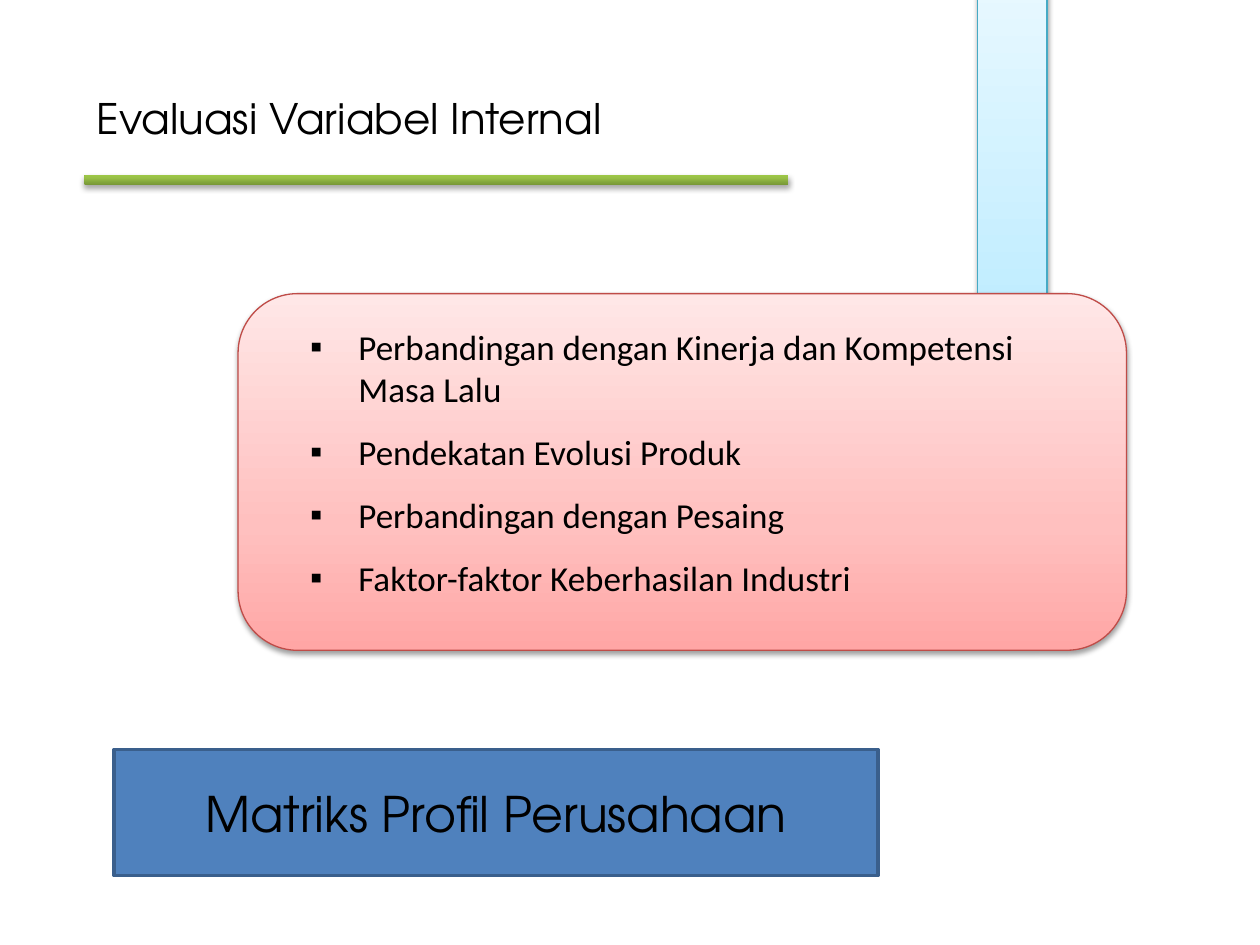
"""Build the slide on evaluating internal variables."""
from lxml.etree import SubElement
from pptx import Presentation
from pptx.dml.color import RGBColor
from pptx.enum.shapes import MSO_SHAPE
from pptx.enum.text import MSO_ANCHOR, MSO_AUTO_SIZE, PP_ALIGN
from pptx.oxml.ns import qn
from pptx.util import Cm, Pt

COLORS = {
    "text": "000000",
    "bar": ["A7E6FF", "C1EDFF", "E7F8FF"],
    "bar_line": "46AAC5",
    "panel": ["FFA6A5", "FFC0BF", "FFE7E7"],
    "panel_line": "BF4C48",
    "rule": ["779737", "9BC348", "9DC746"],
    "box": "4F81BD",
    "box_line": "3A5F8C",
}
HEADING_FONT = "TeX Gyre Adventor"
ITEMS = [
    "Perbandingan dengan Kinerja dan Kompetensi Masa Lalu",
    "Pendekatan Evolusi Produk",
    "Perbandingan dengan Pesaing",
    "Faktor-faktor Keberhasilan Industri",
]


def style_run(p, name, size):
    font = p.runs[0].font
    font.name, font.size = name, Pt(size)
    font.color.rgb = RGBColor.from_string(COLORS["text"])


def add_color(parent, color, alpha=None):
    clr = SubElement(parent, qn("a:srgbClr"), val=color)
    if alpha:
        SubElement(clr, qn("a:alpha"), val=str(alpha * 1000))


prs = Presentation()
prs.slide_width, prs.slide_height = Cm(25.4), Cm(19.05)
slide = prs.slides.add_slide(prs.slide_layouts[1])
title, body = slide.placeholders
tree = slide.shapes._spTree

gradient_shapes = [
    ("bar", MSO_SHAPE.RECTANGLE, (19.71, -0.28, 1.4, 9.8), 35, 38, 1.6),
    ("panel", MSO_SHAPE.ROUNDED_RECTANGLE, (4.8, 5.92, 17.91, 7.19), 35, 38, 1.6),
    ("rule", MSO_SHAPE.ROUNDED_RECTANGLE, (1.7, 3.53, 14.2, 0.2), 80, 35, 1.8),
]
for name, kind, box, middle, alpha, distance in gradient_shapes:
    s = slide.shapes.add_shape(kind, *[Cm(v) for v in box])
    s.fill.gradient()
    s.fill.gradient_angle = 90
    stops = s._element.spPr.find(".//" + qn("a:gsLst"))
    stops.clear()
    for position, color in zip((0, middle, 100), COLORS[name]):
        add_color(SubElement(stops, qn("a:gs"), pos=str(position * 1000)), color)
    if name + "_line" in COLORS:
        s.line.color.rgb = RGBColor.from_string(COLORS[name + "_line"])
        s.line.width = Pt(0.75)
    else:
        s.line.fill.background()
    s.shadow.inherit = False
    shadow = SubElement(
        s._element.spPr.find(qn("a:effectLst")), qn("a:outerShdw"),
        blurRad=str(Pt(3.1)), dist=str(Pt(distance)), dir="5400000", rotWithShape="0")
    add_color(shadow, "000000", alpha)
    if name == "panel":
        tree.append(body._element)
        tree.append(title._element)

body.left, body.top, body.width, body.height = Cm(6), Cm(6.43), Cm(15.4), Cm(6.3)
tf = body.text_frame
tf.text = "\n".join(ITEMS)
tf.auto_size = MSO_AUTO_SIZE.NONE
for i, p in enumerate(tf.paragraphs):
    p.space_before = Pt(12 if i else 0)
    pPr = p._p.get_or_add_pPr()
    pPr.set("marL", str(Cm(0.97)))
    pPr.set("indent", str(-Cm(0.97)))
    SubElement(pPr, qn("a:buFont"), typeface="Arial")
    SubElement(pPr, qn("a:buChar"), char="▪")
    style_run(p, "Calibri", 20)

title.left, title.top, title.width, title.height = Cm(1.7), Cm(1.73), Cm(10.87), Cm(1.27)
tf = title.text_frame
tf.text = "Evaluasi Variabel Internal"
tf.word_wrap = False
tf.auto_size = MSO_AUTO_SIZE.SHAPE_TO_FIT_TEXT
tf.paragraphs[0].alignment = PP_ALIGN.LEFT
style_run(tf.paragraphs[0], HEADING_FONT, 24)

s = slide.shapes.add_shape(MSO_SHAPE.RECTANGLE, Cm(2.3), Cm(15.11), Cm(15.4), Cm(2.54))
s.shadow.inherit = False
s.fill.solid()
s.fill.fore_color.rgb = RGBColor.from_string(COLORS["box"])
s.line.color.rgb = RGBColor.from_string(COLORS["box_line"])
s.line.width = Pt(2)
tf = s.text_frame
tf.text = "Matriks Profil Perusahaan"
tf.vertical_anchor = MSO_ANCHOR.MIDDLE
tf.paragraphs[0].alignment = PP_ALIGN.CENTER
style_run(tf.paragraphs[0], HEADING_FONT, 28)

prs.save("out.pptx")
